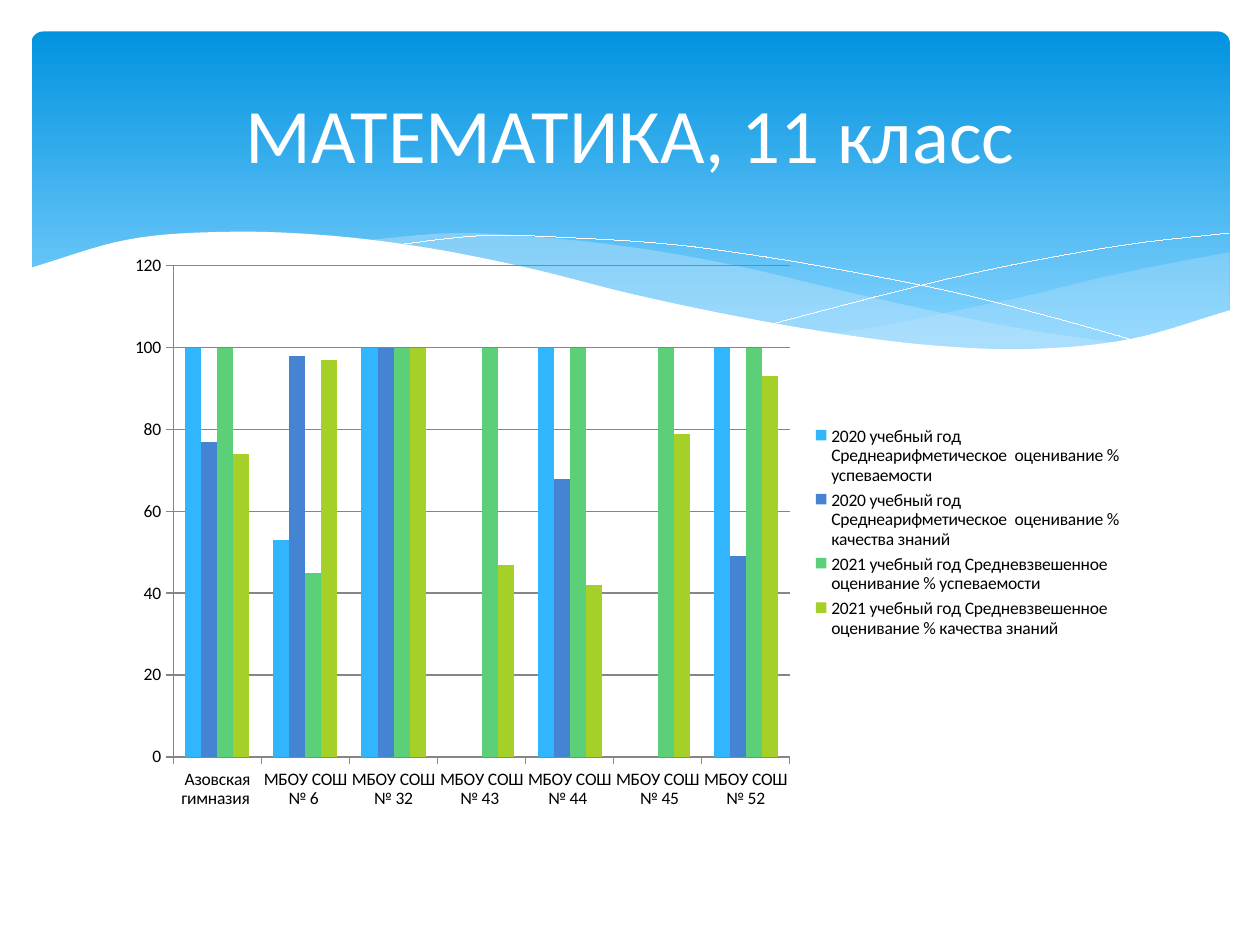
"""Build the slide with 11th-grade mathematics results by school."""
from lxml import etree
from pptx import Presentation
from pptx.chart.data import CategoryChartData
from pptx.dml.color import RGBColor
from pptx.enum.chart import XL_CHART_TYPE, XL_LEGEND_POSITION, XL_TICK_MARK
from pptx.enum.shapes import MSO_SHAPE
from pptx.enum.text import MSO_ANCHOR, PP_ALIGN
from pptx.oxml.ns import qn
from pptx.util import Inches, Pt

COLUMNS = XL_CHART_TYPE.COLUMN_CLUSTERED
LEGEND_RIGHT = XL_LEGEND_POSITION.RIGHT
TICK_OUT = XL_TICK_MARK.OUTSIDE
ROUNDED = MSO_SHAPE.ROUNDED_RECTANGLE
MIDDLE = MSO_ANCHOR.MIDDLE
CENTER = PP_ALIGN.CENTER

FONT = "Calibri"
WHITE = RGBColor(0xFF, 0xFF, 0xFF)
BLACK = RGBColor(0x00, 0x00, 0x00)
GRAY = RGBColor(0x86, 0x86, 0x86)
PALE_BLUE = RGBColor(0xC6, 0xE7, 0xFC)
BANNER_TOP = RGBColor(0x02, 0x93, 0xE0)
BANNER_BOTTOM = RGBColor(0x83, 0xD3, 0xFE)
SKY = RGBColor(0x31, 0xB6, 0xFD)
BLUE = RGBColor(0x45, 0x84, 0xD3)
GREEN = RGBColor(0x5B, 0xD0, 0x78)
LIME = RGBColor(0xA5, 0xD0, 0x28)

STEPS_PER_SPAN = 8
RIGHT_CREST = [2.65, 2.56, 2.45, 2.34, 2.21, 2.1, 2]
RIGHT_TROUGH = [2.65, 2.73, 2.78, 2.77, 2.67, 2.47]
MIDDLE_CREST = [1.91, 1.85, 1.89, 1.98, 2.12, 2.3, 2.47, 2.62, 2.73]
MIDDLE_TROUGH = [1.91, 2.03, 2.19, 2.37, 2.53, 2.66, 2.75, 2.78, 2.73]
FALLING_LINE = [1.95, 1.87, 1.89, 1.94, 2.04, 2.17, 2.32, 2.51, 2.72]
RISING_LINE = [2.57, 2.38, 2.2, 2.05, 1.93, 1.85]
WHITE_CREST = [2.13, 1.9, 1.84, 1.87, 1.97, 2.13, 2.33, 2.5, 2.64, 2.74, 2.77, 2.69, 2.46]
WHITE_BASE = [3.29, 3.29]
WAVES = [
    {"left": 6.61, "right": 9.76, "upper": RIGHT_CREST, "lower": RIGHT_TROUGH, "color": PALE_BLUE, "opacity": 29},
    {"left": 2.86, "right": 8.93, "upper": MIDDLE_CREST, "lower": MIDDLE_TROUGH, "color": PALE_BLUE, "opacity": 40},
    {"left": 3.09, "right": 9.07, "upper": FALLING_LINE},
    {"left": 6.13, "right": 9.75, "upper": RISING_LINE},
    {"left": 0.23, "right": 9.77, "upper": WHITE_CREST, "lower": WHITE_BASE, "color": WHITE, "opacity": 100},
]

SCHOOLS = [
    "Азовская гимназия ", "МБОУ СОШ № 6 ", "МБОУ СОШ № 32", "МБОУ СОШ № 43 ",
    "МБОУ СОШ № 44 ", "МБОУ СОШ  № 45", "МБОУ СОШ № 52",
]
ARITHMETIC = "2020 учебный год Среднеарифметическое  оценивание % "
WEIGHTED = "2021 учебный год Средневзвешенное  оценивание % "
RESULTS = [
    (ARITHMETIC + "успеваемости", SKY, [100, 53, 100, None, 100, None, 100]),
    (ARITHMETIC + "качества знаний", BLUE, [77, 98, 100, None, 68, None, 49]),
    (WEIGHTED + "успеваемости", GREEN, [100, 45, 100, 100, 100, 100, 100]),
    (WEIGHTED + "качества знаний", LIME, [74, 97, 100, 47, 42, 79, 93]),
]


def write_text(shape, text, *, size, color, align, anchor):
    frame = shape.text_frame
    frame.word_wrap = True
    frame.vertical_anchor = anchor
    paragraph = frame.paragraphs[0]
    paragraph.alignment = align
    run = paragraph.add_run()
    run.text = text
    run.font.name = FONT
    run.font.size = Pt(size)
    run.font.color.rgb = color


def smooth_edge(left, right, heights):
    """Return points of a Catmull-Rom curve through evenly spaced heights."""
    spans = len(heights) - 1
    padded = [2 * heights[0] - heights[1], *heights, 2 * heights[-1] - heights[-2]]
    points = []
    for step in range(spans * STEPS_PER_SPAN + 1):
        span = min(step // STEPS_PER_SPAN, spans - 1)
        t = step / STEPS_PER_SPAN - span
        before, start, end, after = padded[span:span + 4]
        y = start + t / 2 * (
            end - before
            + t * (2 * before - 5 * start + 4 * end - after)
            + t * t * (3 * start - before - 3 * end + after))
        x = left + (right - left) * (span + t) / spans
        points.append((Inches(x), Inches(y)))
    return points


presentation = Presentation()
presentation.slide_width = Inches(10)
presentation.slide_height = Inches(7.5)
slide = presentation.slides.add_slide(presentation.slide_layouts[5])

banner = slide.shapes.add_shape(
    ROUNDED, Inches(0.25), Inches(0.25), Inches(9.51), Inches(2.7))
banner.adjustments[0] = 0.034
banner.shadow.inherit = False
banner.line.fill.background()
banner.fill.gradient()
banner.fill.gradient_angle = 270
for stop, color, position in zip(
        banner.fill.gradient_stops, (BANNER_TOP, BANNER_BOTTOM), (0, 0.9)):
    stop.color.rgb = color
    stop.position = position

for wave in WAVES:
    filled = "lower" in wave
    outline = smooth_edge(wave["left"], wave["right"], wave["upper"])
    if filled:
        outline += reversed(smooth_edge(wave["left"], wave["right"], wave["lower"]))
    builder = slide.shapes.build_freeform(*outline[0])
    builder.add_line_segments(outline[1:], close=filled)
    shape = builder.convert_to_shape()
    shape.shadow.inherit = False
    if filled:
        shape.line.fill.background()
        shape.fill.solid()
        shape.fill.fore_color.rgb = wave["color"]
        fill_color = shape.element.spPr.find(".//" + qn("a:srgbClr"))
        etree.SubElement(fill_color, qn("a:alpha"), val=str(wave["opacity"] * 1000))
    else:
        shape.fill.background()
        shape.line.color.rgb = WHITE
        shape.line.width = Pt(0.01)

chart_data = CategoryChartData()
chart_data.categories = SCHOOLS
for name, color, values in RESULTS:
    chart_data.add_series(name, values)
chart = slide.shapes.add_chart(
    COLUMNS, Inches(0.91), Inches(1.94), Inches(8.1), Inches(4.57), chart_data).chart
chart.has_title = False
chart.font.name = FONT
chart.font.size = Pt(10)
chart.font.color.rgb = BLACK
chart.has_legend = True
chart.legend.position = LEGEND_RIGHT
chart.legend.include_in_layout = False
for axis in (chart.category_axis, chart.value_axis):
    axis.major_tick_mark = TICK_OUT
    axis.format.line.color.rgb = GRAY
chart.value_axis.has_major_gridlines = True
chart.value_axis.major_gridlines.format.line.color.rgb = GRAY
plot = chart.plots[0]
plot.gap_width = 150
plot.vary_by_categories = False
for series, (name, color, values) in zip(plot.series, RESULTS):
    series.format.fill.solid()
    series.format.fill.fore_color.rgb = color

title = slide.shapes.title
title.left, title.top = Inches(0.5), Inches(0.37)
title.width, title.height = Inches(9), Inches(1.37)
write_text(title, "МАТЕМАТИКА, 11 класс", size=44, color=WHITE, align=CENTER, anchor=MIDDLE)
title.element.getparent().append(title.element)

presentation.save("out.pptx")
